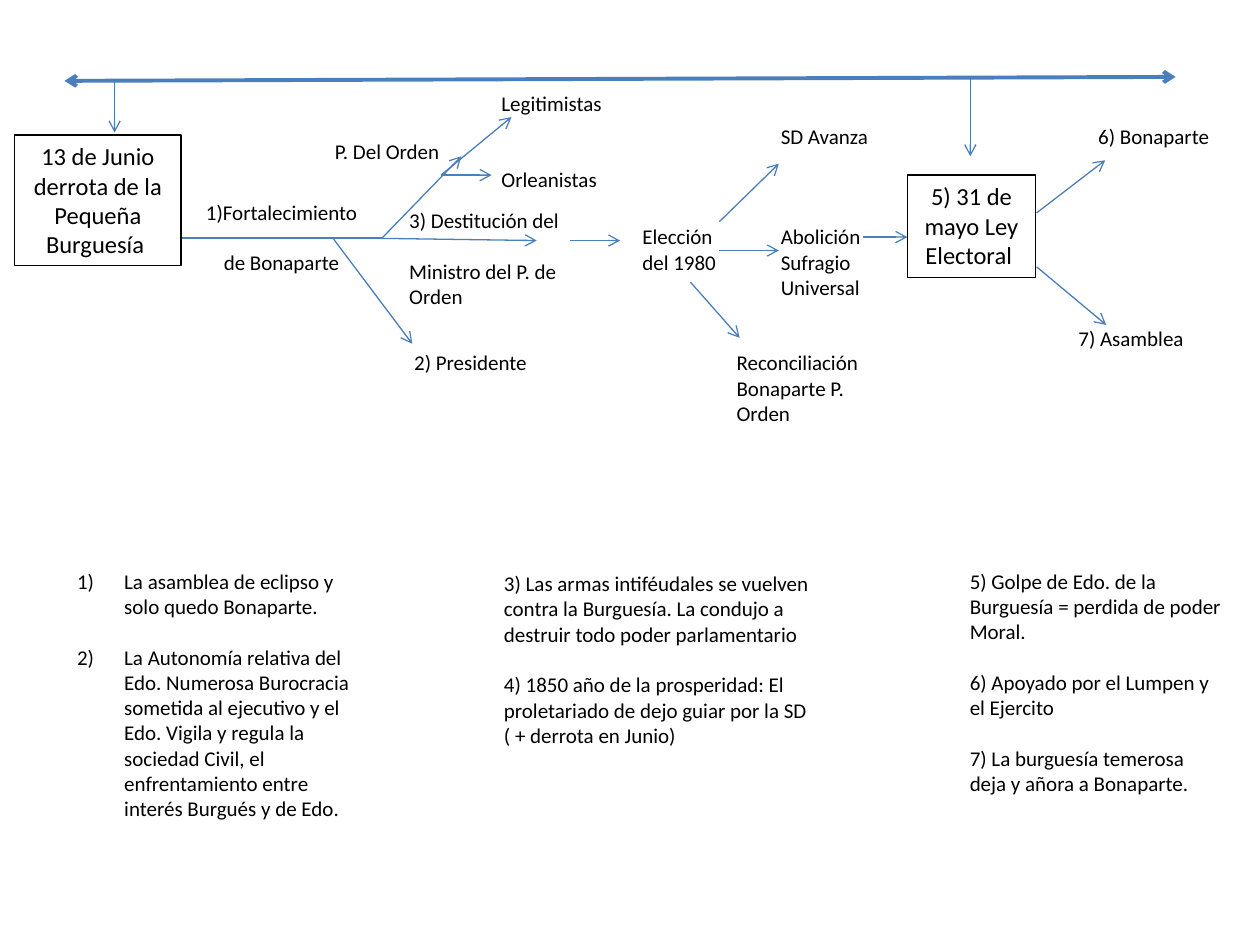
from lxml.etree import SubElement
from pptx import Presentation
from pptx.dml.color import RGBColor
from pptx.enum.shapes import MSO_CONNECTOR as LINE, MSO_SHAPE as SHAPE
from pptx.enum.text import MSO_ANCHOR as ANCHOR, MSO_AUTO_SIZE as FIT, PP_ALIGN as ALIGN
from pptx.oxml.ns import qn
from pptx.util import Cm, Pt

COLORS = {"text": "000000", "border": "000000", "arrow": "4B7EBC"}
FONT = "Calibri"
LINE_HEIGHT = 14.65


def color(name):
    """Return the named colour."""
    return RGBColor.from_string(COLORS[name])


def fill_text(shape, texts, size=12, align=ALIGN.LEFT, gap=1):
    """Write paragraphs set apart by a gap counted in lines."""
    frame = shape.text_frame
    frame.word_wrap = True
    frame.auto_size = FIT.NONE
    frame.vertical_anchor = ANCHOR.TOP
    for index, text in enumerate(texts):
        para = frame.add_paragraph() if index else frame.paragraphs[0]
        para.text = text
        para.alignment = align
        para.space_before = Pt(LINE_HEIGHT * gap if index else 0)
        for span in para.runs:
            span.font.name = FONT
            span.font.size = Pt(size)
            span.font.color.rgb = color("text")


def add_label(page, box, place, *texts, **style):
    """Add a text box at a place relative to the region."""
    left, top, width, height = place
    label = page.shapes.add_textbox(
        Cm(box[0] + left), Cm(box[1] + top), Cm(width), Cm(height))
    fill_text(label, texts, **style)


def add_event(page, box, place, text):
    """Add an outlined event at a place relative to the region."""
    left, top, width, height = place
    event = page.shapes.add_shape(
        SHAPE.RECTANGLE, Cm(box[0] + left), Cm(box[1] + top), Cm(width), Cm(height))
    event.shadow.inherit = False
    event.fill.background()
    event.line.color.rgb = color("border")
    event.line.width = Pt(0.75)
    fill_text(event, [text], size=14, align=ALIGN.CENTER)


def add_arrow(page, box, start, end, width=0.75, heads=("tailEnd",)):
    """Add a straight line with open arrowheads inside the region."""
    x, y = box
    arrow = page.shapes.add_connector(
        LINE.STRAIGHT, Cm(x + start[0]), Cm(y + start[1]), Cm(x + end[0]), Cm(y + end[1]))
    arrow.line.color.rgb = color("arrow")
    arrow.line.width = Pt(width)
    outline = arrow.line._get_or_add_ln()
    for head in heads:
        SubElement(outline, qn(f"a:{head}"), type="arrow")
    SubElement(arrow._element.spPr, qn("a:effectLst"))


def draw_timeline(page, box):
    """Draw the two-headed time axis and its drops to the events."""
    add_arrow(page, box, (0, 0.08), (22.4, 0), 2.25, ("headEnd", "tailEnd"))
    add_arrow(page, box, (1.01, 0.08), (1.01, 1.12))
    add_arrow(page, box, (18.26, 0), (18.26, 1.6))


def draw_defeat(page, box):
    """Draw the June defeat and the branches that follow it."""
    add_event(page, box, (0, 1.02, 3.35, 2.64),
              "13 de Junio derrota de la Pequeña Burguesía ")
    add_label(page, box, (3.43, 2.19, 3.99, 1.8), "1)Fortalecimiento ",
              "de Bonaparte ", align=ALIGN.CENTER)
    add_label(page, box, (6.2, 0.97, 2.9, 0.76), "P. Del Orden")
    add_label(page, box, (9.56, 0, 4.39, 2.31), "Legitimistas", "Orleanistas", gap=2)
    add_label(page, box, (7.8, 5.23, 3.2, 0.76), "2) Presidente")
    add_label(page, box, (7.7, 2.36, 3.99, 2.31), "3) Destitución del",
              "Ministro del P. de Orden")
    add_arrow(page, box, (3.36, 3.1), (7.4, 3.1), heads=())
    for start, end in [
        ((7.4, 3.1), (9, 1.45)),
        ((8.59, 1.83), (9.61, 1.83)),
        ((8.59, 1.83), (10.01, 0.66)),
        ((6.41, 3.1), (8.01, 5.23)),
        ((7.02, 3.1), (10.52, 3.15)),
    ]:
        add_arrow(page, box, start, end)


def draw_election(page, box):
    """Draw the election and its three outcomes."""
    add_label(page, box, (1.2, 2.03, 2.39, 1.27), "Elección del 1980")
    add_label(page, box, (3.99, 0, 2.36, 0.76), "SD Avanza")
    add_label(page, box, (3.99, 2.03, 2.79, 1.8), "Abolición Sufragio Universal")
    add_label(page, box, (3.1, 4.57, 3.68, 1.8), "Reconciliación Bonaparte P. Orden")
    for start, end in [
        ((0, 2.49), (1, 2.49)),
        ((3, 2.11), (4.2, 0.94)),
        ((3, 2.69), (4.2, 2.69)),
        ((2.42, 3.33), (3.41, 4.45)),
        ((5.9, 2.42), (6.79, 2.42)),
    ]:
        add_arrow(page, box, start, end)


def draw_law(page, box):
    """Draw the electoral law and the two sides it leads to."""
    add_event(page, box, (0, 1.17, 2.59, 2.06), "5) 31 de mayo Ley Electoral ")
    add_label(page, box, (3.6, 0, 3.2, 0.76), "6) Bonaparte")
    add_label(page, box, (3.2, 4.07, 2.79, 0.76), "7) Asamblea")
    add_arrow(page, box, (2.61, 1.93), (3.99, 0.87))
    add_arrow(page, box, (2.61, 3.02), (4.01, 4.19))


def draw_notes(page, box, body):
    """Place the numbered list and the two columns of notes."""
    body.left, body.top = Cm(box[0]), Cm(box[1])
    body.width, body.height = Cm(6.02), Cm(5.38)
    fill_text(body, [
        "La asamblea de eclipso y solo quedo Bonaparte.",
        "La Autonomía relativa del Edo. Numerosa Burocracia sometida al ejecutivo "
        "y el Edo. Vigila y regula la sociedad Civil, el enfrentamiento entre "
        "interés Burgués y de Edo.",
    ])
    for para in body.text_frame.paragraphs:
        props = para._p.get_or_add_pPr()
        props.set("marL", str(Cm(0.95)))
        props.set("indent", str(-Cm(0.95)))
        SubElement(props, qn("a:buFont"), typeface="+mj-lt")
        SubElement(props, qn("a:buAutoNum"), type="arabicParenR")
    add_label(page, box, (8.61, 0.05, 7.19, 3.84),
              "3) Las armas intiféudales se vuelven contra la Burguesía. "
              "La condujo a destruir todo poder parlamentario",
              "4) 1850 año de la prosperidad: El proletariado de dejo guiar por la SD"
              "\v( + derrota en Junio)")
    add_label(page, box, (18, 0, 5.59, 4.88),
              "5) Golpe de Edo. de la Burguesía = perdida de poder Moral.",
              "6) Apoyado por el Lumpen y el Ejercito",
              "7) La burguesía temerosa deja y añora a Bonaparte.")


def main():
    """Build the slide and save the deck."""
    deck = Presentation()
    deck.slide_width, deck.slide_height = Cm(25.4), Cm(19.05)
    page = deck.slides.add_slide(deck.slide_layouts[1])
    title = page.shapes.title._element
    title.getparent().remove(title)
    draw_timeline(page, (1.3, 1.55))
    draw_defeat(page, (0.3, 1.7))
    draw_election(page, (11.5, 2.36))
    draw_law(page, (18.29, 2.36))
    draw_notes(page, (1.3, 11.33), page.placeholders[1])
    deck.save("out.pptx")


if __name__ == "__main__":
    main()
